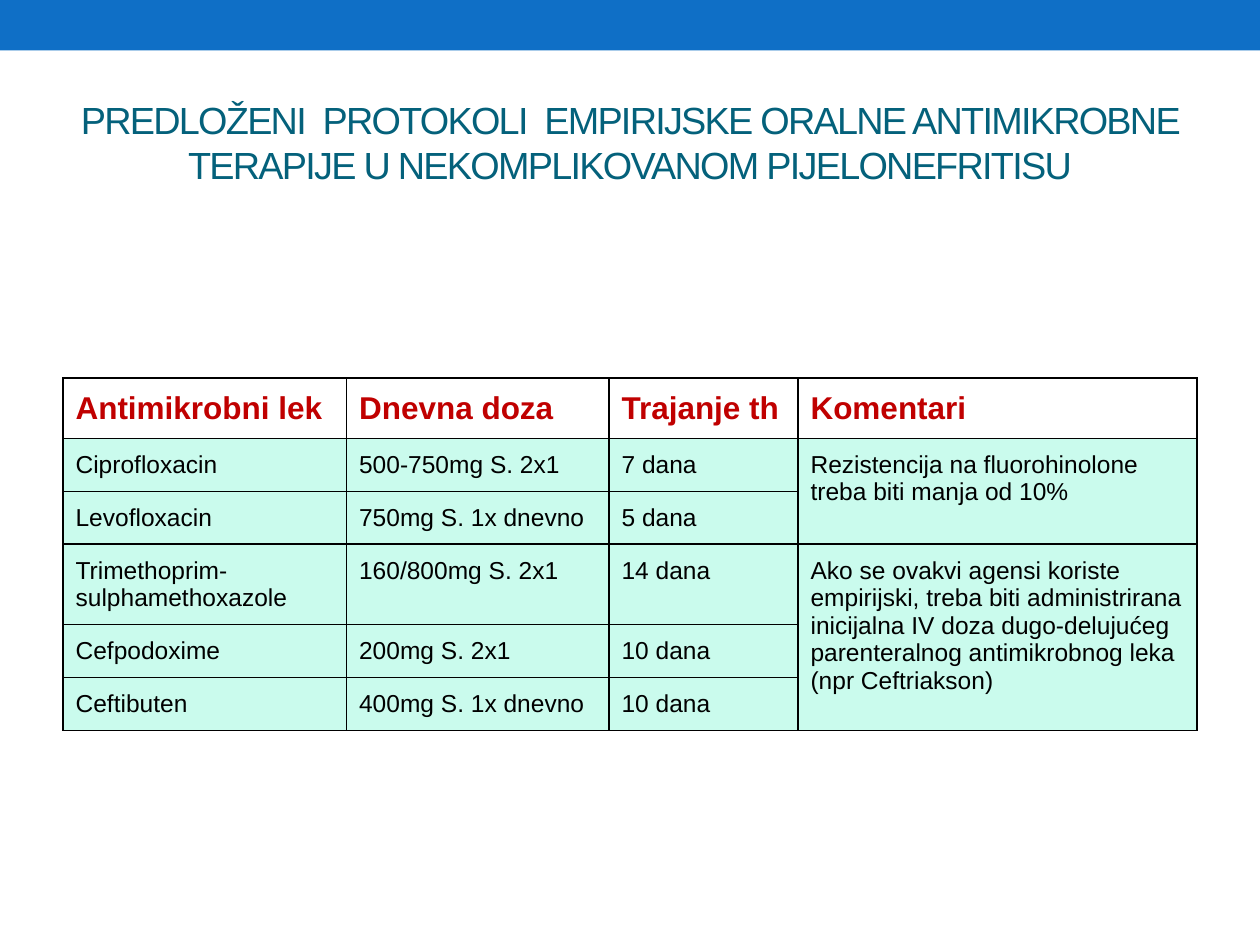
from lxml.etree import SubElement
from pptx import Presentation
from pptx.dml.color import RGBColor
from pptx.enum.shapes import MSO_SHAPE as Shape
from pptx.enum.text import MSO_ANCHOR as Anchor, MSO_AUTO_SIZE as AutoSize, PP_ALIGN as Align
from pptx.oxml.ns import qn
from pptx.util import Pt

COLORS = {
    "band": "0F6FC6",
    "title": "04617B",
    "heading": "C00000",
    "text": "000000",
    "cell": "CAFBED",
    "border": "000000",
}
TITLE = "PREDLOŽENI  PROTOKOLI  EMPIRIJSKE ORALNE ANTIMIKROBNE TERAPIJE U NEKOMPLIKOVANOM PIJELONEFRITISU"
THERAPY = [
    ["Antimikrobni lek", "Dnevna doza", "Trajanje th", "Komentari"],
    ["Ciprofloxacin", "500-750mg S. 2x1", "7 dana",
     "Rezistencija na fluorohinolone treba biti manja od 10%"],
    ["Levofloxacin", "750mg S. 1x dnevno", "5 dana"],
    ["Trimethoprim-sulphamethoxazole", "160/800mg S. 2x1", "14 dana",
     "Ako se ovakvi agensi koriste empirijski, treba biti administrirana inicijalna IV doza "
     "dugo-delujućeg parenteralnog antimikrobnog leka (npr Ceftriakson)"],
    ["Cefpodoxime", "200mg S. 2x1", "10 dana"],
    ["Ceftibuten", "400mg S. 1x dnevno", "10 dana"],
]
COLUMN_WIDTHS = [162, 150, 108, 228]
ROW_HEIGHTS = [34.5, 30.2, 30.2, 46, 30.2, 30.2]
COMMENT_ROWS = [(1, 2), (3, 5)]


def color(name):
    return RGBColor.from_string(COLORS[name])


def write_text(frame, text, size=14, fill="text", bold=False, align=Align.LEFT, spacing=None):
    para = frame.paragraphs[0]
    para.alignment = align
    span = para.add_run()
    span.text = text
    span.font.name = "Arial"
    span.font.size = Pt(size)
    span.font.bold = bold
    span.font.color.rgb = color(fill)
    if spacing is not None:
        span.font._element.set("spc", str(spacing * 100))


def add_band(page):
    band = page.shapes.add_shape(Shape.RECTANGLE, 0, 0, Pt(720), Pt(28.8))
    band.shadow.inherit = False
    band.fill.solid()
    band.fill.fore_color.rgb = color("band")
    band.line.fill.background()


def add_title(page):
    title = page.shapes.title
    title.left, title.top, title.width, title.height = Pt(36), Pt(42), Pt(648), Pt(78)
    frame = title.text_frame
    frame.word_wrap = True
    frame.auto_size = AutoSize.NONE
    frame.vertical_anchor = Anchor.MIDDLE
    write_text(frame, TITLE, size=21.6, fill="title", align=Align.CENTER, spacing=-1)


def add_borders(cell):
    properties = cell._tc.get_or_add_tcPr()
    for index, side in enumerate(("lnL", "lnR", "lnT", "lnB")):
        line = properties.makeelement(qn(f"a:{side}"), {"w": str(Pt(1))})
        solid = SubElement(line, qn("a:solidFill"))
        SubElement(solid, qn("a:srgbClr"), val=COLORS["border"])
        properties.insert(index, line)


def format_cell(cell, is_heading):
    cell.margin_left = cell.margin_right = cell.margin_top = cell.margin_bottom = Pt(7.2)
    cell.vertical_anchor = Anchor.TOP
    if is_heading:
        cell.fill.background()
    else:
        cell.fill.solid()
        cell.fill.fore_color.rgb = color("cell")
    add_borders(cell)


def add_therapy_table(page):
    frame = page.shapes.add_table(len(ROW_HEIGHTS), len(COLUMN_WIDTHS), Pt(36), Pt(216),
                                  Pt(sum(COLUMN_WIDTHS)), Pt(sum(ROW_HEIGHTS)))
    table = frame.table
    table.first_row = table.horz_banding = False
    for column, width in zip(table.columns, COLUMN_WIDTHS):
        column.width = Pt(width)
    for row, height in zip(table.rows, ROW_HEIGHTS):
        row.height = Pt(height)
    for row_index, row in enumerate(table.rows):
        for cell in row.cells:
            format_cell(cell, row_index == 0)
    for first, last in COMMENT_ROWS:
        table.cell(first, 3).merge(table.cell(last, 3))
    heading = {"size": 18, "fill": "heading", "bold": True}
    for row_index, texts in enumerate(THERAPY):
        style = heading if row_index == 0 else {}
        for column_index, text in enumerate(texts):
            write_text(table.cell(row_index, column_index).text_frame, text, **style)


def main():
    deck = Presentation()
    deck.slide_width, deck.slide_height = Pt(720), Pt(540)
    page = deck.slides.add_slide(deck.slide_layouts[5])
    add_band(page)
    add_title(page)
    add_therapy_table(page)
    deck.save("out.pptx")


if __name__ == "__main__":
    main()
